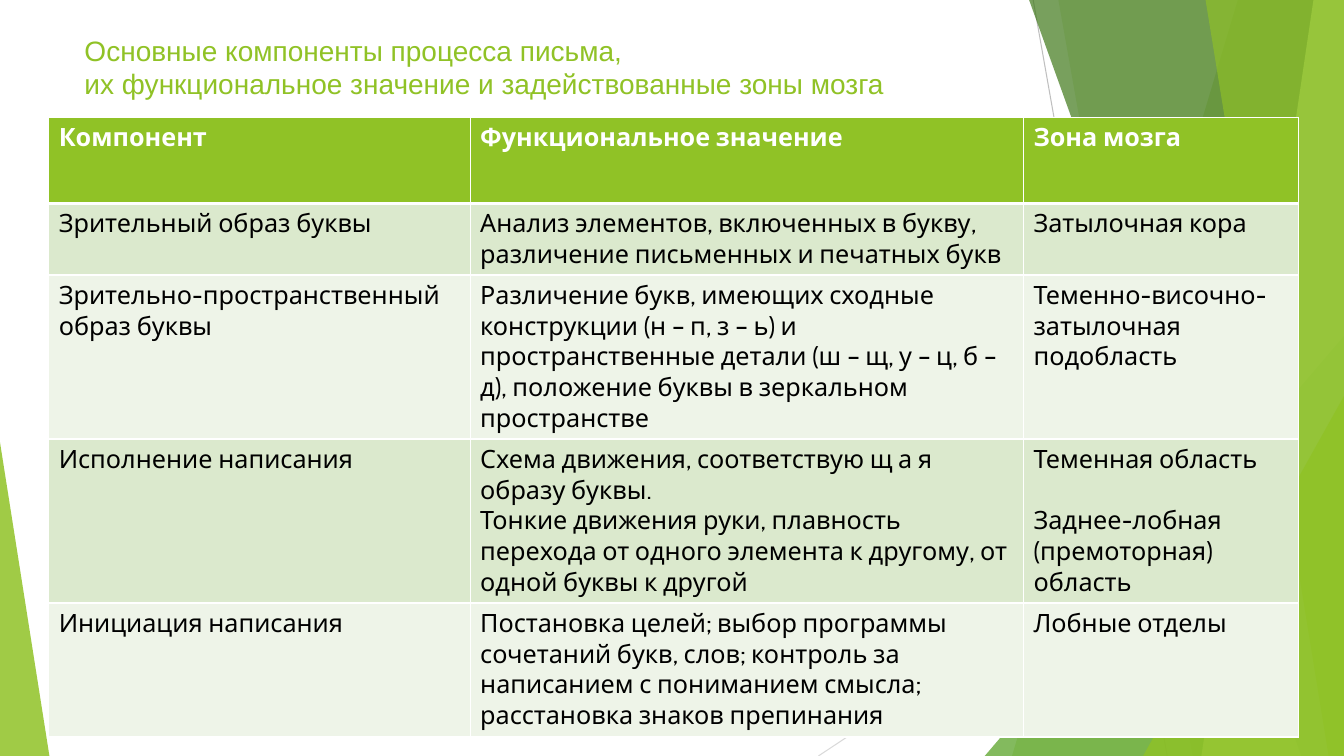
import dataclasses
import typing

import pptx
import pptx.dml.color
import pptx.enum.shapes
import pptx.enum.text
import pptx.oxml
import pptx.oxml.ns
import pptx.util

Pt = pptx.util.Pt
WIDTH, HEIGHT = 960, 540
COLORS = {
    "green": "90C226", "leaf": "54A021", "forest": "3F7819", "lime": "C0E474",
    "gray": "BFBFBF", "light gray": "D9D9D9", "white": "FFFFFF", "black": "000000",
    "odd row": "DBE9CD", "even row": "EEF4E8",
}


@dataclasses.dataclass
class Ray:
    x1: float
    y1: float
    x2: float
    y2: float
    color: str


@dataclasses.dataclass
class Facet:
    """Full-height band reaching the right edge of the slide."""
    top_x: float
    bottom_x: float
    color: str
    opacity: int


@dataclasses.dataclass
class Triangle:
    """Triangle standing on the bottom edge of the slide."""
    left: float
    top: float
    width: float
    apex: float
    color: str
    opacity: int


RAYS = [Ray(738, 0, 833.75, HEIGHT, "gray"), Ray(WIDTH, 290.2, 584.6, HEIGHT, "light gray")]
DECOR = [
    Facet(884.2, 722.9, "green", 30),
    Facet(756, 851.8, "green", 20),
    Triangle(703.4, 240, 256.6, 1, "leaf", 72),
    Facet(735.1, 929.5, "forest", 70),
    Facet(938.2, 858.2, "lime", 70),
    Facet(861.1, 949, "green", 65),
    Triangle(816.5, 283, 143.5, 1, "green", 80),
    Triangle(0, 316, 35.3, 0, "green", 85),
]
TITLE = "Основные компоненты процесса письма,\vих функциональное значение и задействованные зоны мозга"
COLUMN_WIDTHS = [301, 395.3, 196.6]
ROW_HEIGHTS = [61.7, 51, 117.2, 117.2, 95.7]
ROWS = [
    ["Компонент", "Функциональное значение", "Зона мозга"],
    ["Зрительный образ буквы",
     "Анализ элементов, включенных в букву, различение письменных и печатных букв",
     "Затылочная кора"],
    ["Зрительно-пространственный образ буквы",
     "Различение букв, имеющих сходные конструкции (н – п, з – ь) и пространственные детали "
     "(ш – щ, у – ц, б – д), положение буквы в зеркальном пространстве",
     "Теменно-височно-затылочная подобласть"],
    ["Исполнение написания",
     "Схема движения, соответствую щ а я образу буквы.\vТонкие движения руки, плавность "
     "перехода от одного элемента к другому, от одной буквы к другой",
     "Теменная область\nЗаднее-лобная (премоторная) область"],
    ["Инициация написания",
     "Постановка целей; выбор программы сочетаний букв, слов; контроль за написанием "
     "с пониманием смысла; расстановка знаков препинания",
     "Лобные отделы"],
]


def rgb(name: str) -> pptx.dml.color.RGBColor:
    return pptx.dml.color.RGBColor.from_string(COLORS[name])


def format_text(tf: typing.Any, font: str, size: float, color: str, bold: bool = False) -> None:
    for p in tf.paragraphs:
        for r in p.runs:
            r.font.name, r.font.size, r.font.bold = font, Pt(size), bold
            r.font.color.rgb = rgb(color)


def draw_ray(s: typing.Any, ray: Ray) -> None:
    line = s.shapes.add_connector(pptx.enum.shapes.MSO_CONNECTOR.STRAIGHT,
                                  Pt(ray.x1), Pt(ray.y1), Pt(ray.x2), Pt(ray.y2))
    line.line.color.rgb = rgb(ray.color)
    line.line.width = Pt(0.75)
    pptx.oxml.ns.qn("a:effectLst")
    line._element.spPr.append(pptx.oxml.parse_xml(
        f'<a:effectLst {pptx.oxml.ns.nsdecls("a")}/>'))


def draw_decor(s: typing.Any, part: typing.Union[Facet, Triangle]) -> None:
    if isinstance(part, Facet):
        corners = [(WIDTH, 0), (WIDTH, HEIGHT), (part.bottom_x, HEIGHT)]
        builder = s.shapes.build_freeform(Pt(part.top_x), 0)
        builder.add_line_segments([(Pt(x), Pt(y)) for x, y in corners], close=True)
        sp = builder.convert_to_shape()
    else:
        sp = s.shapes.add_shape(pptx.enum.shapes.MSO_SHAPE.ISOSCELES_TRIANGLE, Pt(part.left),
                                Pt(part.top), Pt(part.width), Pt(HEIGHT - part.top))
        sp.adjustments[0] = part.apex
    sp.shadow.inherit = False
    sp.line.fill.background()
    sp.fill.solid()
    sp.fill.fore_color.rgb = rgb(part.color)
    color = sp._element.spPr.find(".//" + pptx.oxml.ns.qn("a:srgbClr"))
    color.append(pptx.oxml.parse_xml(
        f'<a:alpha {pptx.oxml.ns.nsdecls("a")} val="{part.opacity * 1000}"/>'))


def draw_title(s: typing.Any) -> None:
    sp = s.shapes.add_textbox(Pt(53.3), Pt(20.2), Pt(676.8), Pt(62.6))
    tf = sp.text_frame
    tf.word_wrap = True
    tf.vertical_anchor = pptx.enum.text.MSO_ANCHOR.TOP
    tf.text = TITLE
    format_text(tf, "Arial", 20, "green")


def set_borders(cell: typing.Any, widths: dict[str, float]) -> None:
    for i, (side, width) in enumerate(widths.items()):
        cell._tc.get_or_add_tcPr().insert(i, pptx.oxml.parse_xml(
            f'<a:ln{side} {pptx.oxml.ns.nsdecls("a")} w="{Pt(width)}"><a:solidFill>'
            f'<a:srgbClr val="{COLORS["white"]}"/></a:solidFill></a:ln{side}>'))


def draw_table(s: typing.Any) -> None:
    table = s.shapes.add_table(len(ROWS), len(COLUMN_WIDTHS), Pt(34.8), Pt(83.7),
                               Pt(sum(COLUMN_WIDTHS)), Pt(sum(ROW_HEIGHTS))).table
    for column, width in zip(table.columns, COLUMN_WIDTHS):
        column.width = Pt(width)
    for i, (row, height, texts) in enumerate(zip(table.rows, ROW_HEIGHTS, ROWS)):
        row.height = Pt(height)
        header = i == 0
        fill = "green" if header else "odd row" if i % 2 else "even row"
        for cell, text in zip(row.cells, texts):
            cell.fill.solid()
            cell.fill.fore_color.rgb = rgb(fill)
            set_borders(cell, {"L": 1, "R": 1, "T": 3 if i == 1 else 1, "B": 3 if header else 1})
            cell.text_frame.text = text
            format_text(cell.text_frame, "Cabin", 18, "white" if header else "black", header)
            for p in cell.text_frame.paragraphs[1:]:
                p.space_before = Pt(22)


def main() -> None:
    prs = pptx.Presentation()
    prs.slide_width, prs.slide_height = Pt(WIDTH), Pt(HEIGHT)
    s = prs.slides.add_slide(prs.slide_layouts[6])

    # Background decoration
    for ray in RAYS:
        draw_ray(s, ray)
    for part in DECOR:
        draw_decor(s, part)

    # Title and table
    draw_title(s)
    draw_table(s)
    prs.save("out.pptx")


if __name__ == "__main__":
    main()
